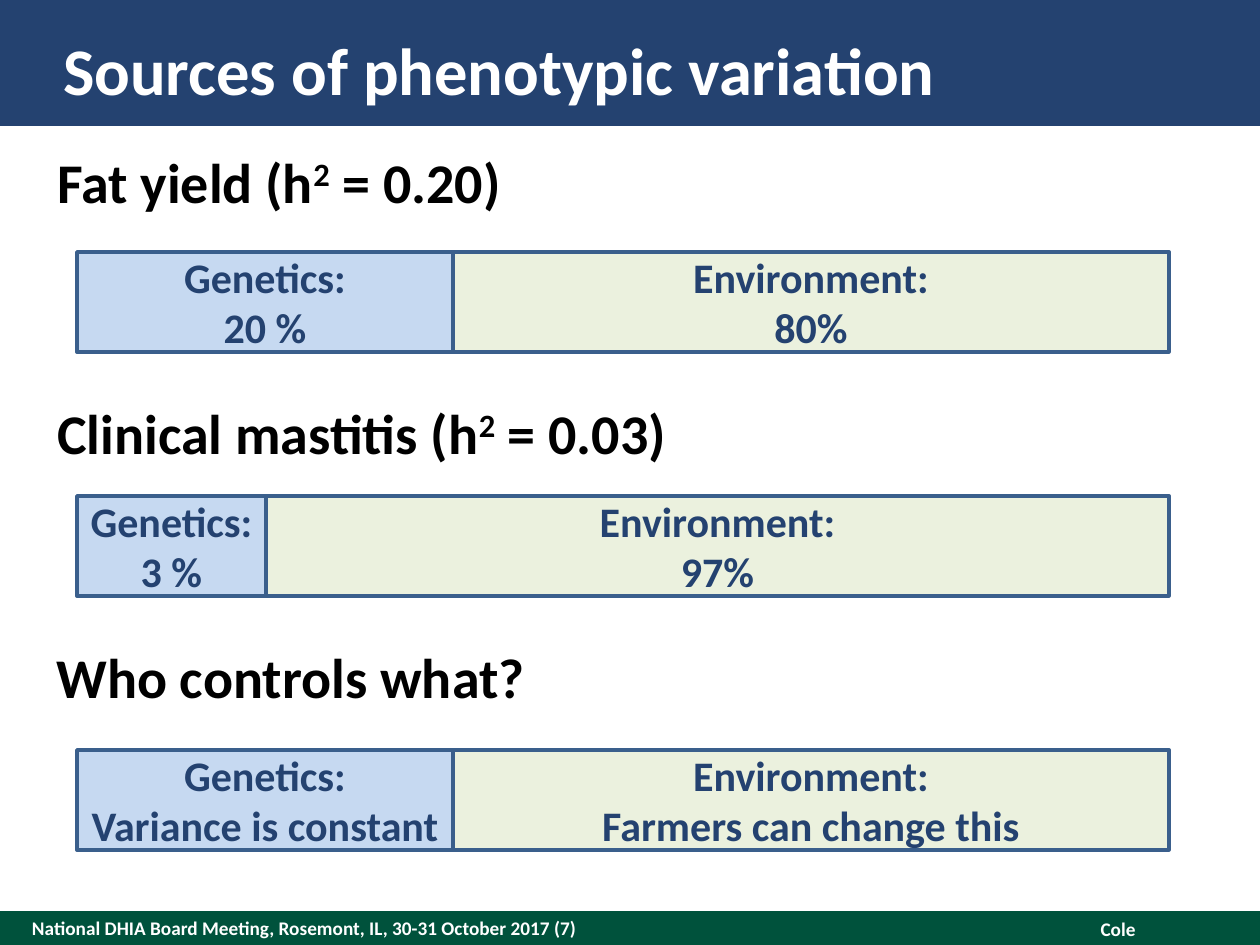
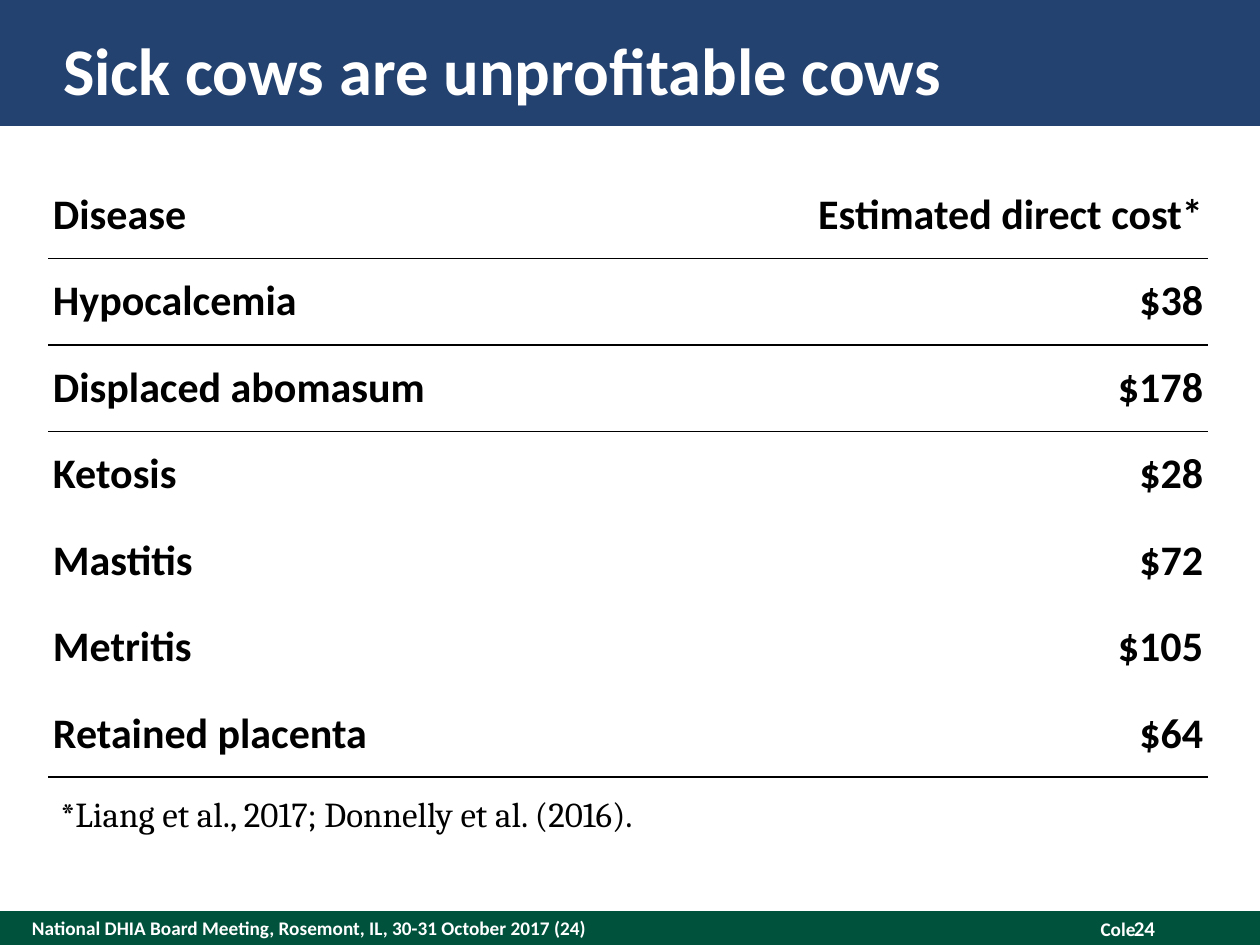
from dataclasses import dataclass

import pptx
import pptx.dml.color
import pptx.enum.shapes
import pptx.enum.text
import pptx.oxml
import pptx.oxml.ns
import pptx.util

PX = 914400 / 126
SLIDE_W, SLIDE_H = 1260, 945
NAVY, GREEN, WHITE, BLACK = "244270", "00523C", "FFFFFF", "000000"
GENETICS_FILL, ENVIRONMENT_FILL, BAR_LINE = "C6D9F1", "EBF1DE", "3A5F8C"
FOOTER_TOP, FOOTER_H = 911, 34
BAR_LEFT, BAR_RIGHT, BAR_H = 77, 1169, 100
TABLE_LEFT, TABLE_TOP, COL_W, ROW_H = 48, 172, 580, 86.5
PLAIN_TABLE = "{2D5ABB26-0587-4C30-8999-92F81FD0307C}"

ALIGN = pptx.enum.text.PP_ALIGN
ANCHOR = pptx.enum.text.MSO_ANCHOR


@dataclass
class Source:
    heading: str
    heading_left: int
    heading_top: int
    bar_top: int
    split: int
    genetics: str
    environment: str


SOURCES = [
    Source("Fat yield (h^2^ = 0.20)", 45, 141, 252, 453,
           "Genetics:\v20 %", "Environment:\v80%"),
    Source("Clinical mastitis (h^2^ = 0.03)", 45, 392, 496, 266,
           "Genetics: 3 %", "Environment:\v97%"),
    Source("Who controls what?", 44, 636, 750, 453,
           "Genetics:\vVariance is constant",
           "Environment:\vFarmers can change this"),
]

COSTS = [
    ("Disease", "Estimated direct cost*"),
    ("Hypocalcemia", "$38"),
    ("Displaced abomasum", "$178"),
    ("Ketosis", "$28"),
    ("Mastitis", "$72"),
    ("Metritis", "$105"),
    ("Retained placenta", "$64"),
]
RULED_ROWS = {0, 1, len(COSTS) - 1}


def px(n: float) -> int:
    return round(n * PX)


def color(value: str) -> pptx.dml.color.RGBColor:
    return pptx.dml.color.RGBColor.from_string(value)


def box(left: int, top: int, width: int, height: int) -> tuple:
    return px(left), px(top), px(width), px(height)


def style(tf, size: int, hex_color: str, align=ALIGN.LEFT,
          bold: bool = True, font: str = "Calibri") -> None:
    for p in tf.paragraphs:
        p.alignment = align
        for r in p.runs:
            r.font.name = font
            r.font.size = pptx.util.Pt(size)
            r.font.bold = bold
            r.font.color.rgb = color(hex_color)


def clear_margins(tf) -> None:
    tf.margin_left = tf.margin_right = tf.margin_top = tf.margin_bottom = 0
    tf.vertical_anchor = ANCHOR.MIDDLE


def add_rect(s, area: tuple, fill: str, line: str = ""):
    sp = s.shapes.add_shape(pptx.enum.shapes.MSO_SHAPE.RECTANGLE, *area)
    sp.shadow.inherit = False
    sp.fill.solid()
    sp.fill.fore_color.rgb = color(fill)
    if line:
        sp.line.color.rgb = color(line)
        sp.line.width = pptx.util.Pt(2)
    else:
        sp.line.fill.background()
    return sp


def add_text(s, area: tuple, text: str):
    tf = s.shapes.add_textbox(*area).text_frame
    tf.word_wrap = True
    tf.text = text
    return tf


def add_slide(prs, title: str, number: int):
    s = prs.slides.add_slide(prs.slide_layouts[5])
    add_rect(s, box(0, FOOTER_TOP, SLIDE_W, FOOTER_H), GREEN)
    add_rect(s, box(0, 0, SLIDE_W, 126), NAVY)

    meeting = f"National DHIA Board Meeting, Rosemont, IL, 30-31 October 2017 ({number})"
    tf = add_text(s, box(32, FOOTER_TOP, 882, FOOTER_H), meeting)
    clear_margins(tf)
    style(tf, 11, WHITE)
    tf = add_text(s, box(896, FOOTER_TOP, 252, 37), "Cole")
    style(tf, 11, WHITE, ALIGN.RIGHT)

    sp = s.shapes.title
    s.shapes._spTree.append(sp._element)
    sp.left, sp.top, sp.width, sp.height = box(63, 25, 1134, 88)
    tf = sp.text_frame
    tf.text = title
    tf.auto_size = pptx.enum.text.MSO_AUTO_SIZE.NONE
    clear_margins(tf)
    style(tf, 38, WHITE)
    return s


def add_heading(s, source: Source) -> None:
    tf = add_text(s, box(source.heading_left, source.heading_top, 644, 81), "")
    tf.word_wrap = False
    p = tf.paragraphs[0]
    for i, part in enumerate(source.heading.split("^")):
        r = p.add_run()
        r.text = part
        if i % 2:
            r._r.get_or_add_rPr().set("baseline", "30000")
    style(tf, 32, BLACK)


def add_bar(s, source: Source) -> None:
    for left, right, fill, text in (
        (BAR_LEFT, source.split, GENETICS_FILL, source.genetics),
        (source.split, BAR_RIGHT, ENVIRONMENT_FILL, source.environment),
    ):
        area = box(left, source.bar_top, right - left, BAR_H)
        tf = add_rect(s, area, fill, BAR_LINE).text_frame
        tf.word_wrap = True
        tf.text = text
        tf.vertical_anchor = ANCHOR.MIDDLE
        style(tf, 24, NAVY, ALIGN.CENTER)


def add_border(cell, side: str) -> None:
    ns = pptx.oxml.ns.nsdecls("a")
    line = pptx.oxml.parse_xml(
        f'<a:{side} {ns} w="12700"><a:solidFill><a:srgbClr val="{BLACK}"/>'
        f'</a:solidFill></a:{side}>')
    cell._tc.get_or_add_tcPr().insert(0, line)


def add_cost_table(s) -> None:
    area = box(TABLE_LEFT, TABLE_TOP, 2 * COL_W, ROW_H * len(COSTS))
    table = s.shapes.add_table(len(COSTS), 2, *area).table
    table.first_row = table.horz_banding = False
    table._tbl.tblPr[0].text = PLAIN_TABLE
    for i, texts in enumerate(COSTS):
        table.rows[i].height = px(ROW_H)
        for j, text in enumerate(texts):
            cell = table.cell(i, j)
            cell.text = text
            cell.fill.background()
            cell.vertical_anchor = ANCHOR.MIDDLE
            cell.margin_left = cell.margin_right = px(5)
            cell.margin_top = cell.margin_bottom = px(3)
            style(cell.text_frame, 24, BLACK, ALIGN.RIGHT if j else ALIGN.LEFT)
            if i in RULED_ROWS:
                add_border(cell, "lnB")
            if i - 1 in RULED_ROWS:
                add_border(cell, "lnT")


def build_variation(prs) -> None:
    s = add_slide(prs, "Sources of phenotypic variation", 7)
    for source in SOURCES:
        add_bar(s, source)
        add_heading(s, source)


def build_costs(prs) -> None:
    s = add_slide(prs, "Sick cows are unprofitable cows", 24)
    tf = add_text(s, box(861, FOOTER_TOP, 294, FOOTER_H), "24")
    clear_margins(tf)
    style(tf, 12, WHITE, ALIGN.RIGHT)
    add_cost_table(s)
    tf = add_text(s, box(48, 786, 1149, 55),
                  "*Liang et al., 2017; Donnelly et al. (2016).")
    style(tf, 20, BLACK, bold=False, font="Cambria")


def main() -> None:
    prs = pptx.Presentation()
    prs.slide_width, prs.slide_height = px(SLIDE_W), px(SLIDE_H)
    build_variation(prs)
    build_costs(prs)
    prs.save("out.pptx")


if __name__ == "__main__":
    main()
